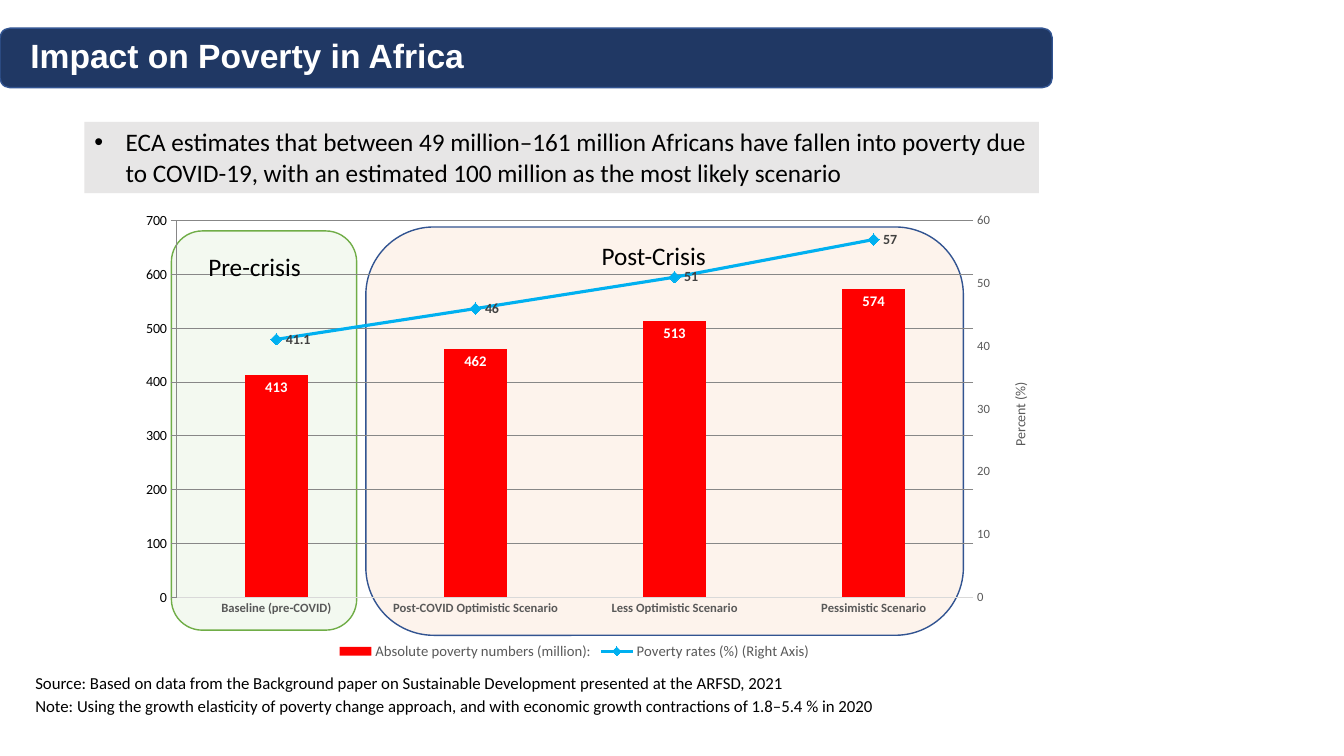
from pptx import Presentation, util as u
from pptx.chart.axis import ValueAxis
from pptx.chart.data import CategoryChartData
from pptx.dml.color import RGBColor
from pptx.enum import chart as ch, shapes, text
from pptx.oxml import parse_xml
from pptx.oxml.ns import nsdecls, qn
from lxml import etree

# Content
TITLE = "Impact on Poverty in Africa"
MESSAGE = ("ECA estimates that between 49 million–161 million Africans have fallen into poverty due "
           "to COVID-19, with an estimated 100 million as the most likely scenario")
NOTES = [
    "Source: Based on data from the Background paper on Sustainable Development presented at the ARFSD, 2021",
    "Note: Using the growth elasticity of poverty change approach, and with economic growth "
    "contractions of 1.8–5.4 % in 2020",
]
SCENARIOS = ["Baseline (pre-COVID)", "Post-COVID Optimistic Scenario",
             "Less Optimistic Scenario", "Pessimistic Scenario"]
SERIES = [("Absolute poverty numbers (million):", [413, 462, 513, 574]),
          ("Poverty rates (%) (Right Axis)", [41.1, 46, 51, 57])]
AXES = [("Millions of people", 700, 100), ("Percent (%)", 60, 10)]
PERIODS = [("Pre-crisis", (5, 6.22, 3.23, 1.02)), ("Post-Crisis", (14.91, 5.94, 3.23, 1.02))]
PLOT = dict(x=0.072, y=0.052, w=0.857, h=0.805)


class Theme:
    head_font, font = "Arial", "Calibri"
    navy, blue, green = "203864", "325491", "70AD47"
    peach, mint, grey = "FBE5D6", "E2F0D9", "E7E6E6"
    red, cyan, rule = "FF0000", "00B0F0", "D9D9D9"
    white, black, dark, mid = "FFFFFF", "000000", "404040", "595959"
    title, body, note, legend, small, tick = 24, 18, 12, 10.5, 10, 9


def rgb(c):
    return RGBColor.from_string(c)


def box(at):
    return [u.Cm(v) for v in at]


def style(font, size, color, bold=False, name=Theme.font):
    font.size, font.bold, font.name = u.Pt(size), bold, name
    font.color.rgb = rgb(color)


def write(tf, lines, size=Theme.body, color=Theme.black, bold=False, name=Theme.font,
          align=None, spacing=None, left=0, bullet=None, anchor=text.MSO_ANCHOR.TOP):
    tf.word_wrap, tf.vertical_anchor = True, anchor
    for i, line in enumerate(lines):
        p = tf.paragraphs[0] if i == 0 else tf.add_paragraph()
        pPr = p._p.get_or_add_pPr()
        pPr.set("marL", str(u.Cm(left)))
        pPr.set("indent", str(-u.Cm(left) if bullet else 0))
        if bullet:
            etree.SubElement(pPr, qn("a:buFont"), typeface="Arial")
            etree.SubElement(pPr, qn("a:buChar"), char=bullet)
        p.alignment, p.line_spacing = align, spacing
        r = p.add_run()
        r.text = line
        style(r.font, size, color, bold, name)


def panel(s, kind, at, fill, line=None, opacity=None):
    sp = s.shapes.add_shape(kind, *box(at))
    sp.shadow.inherit = False
    sp.fill.solid()
    sp.fill.fore_color.rgb = rgb(fill)
    if opacity:
        clr = sp._element.spPr.find(qn("a:solidFill"))[0]
        etree.SubElement(clr, qn("a:alpha"), val=str(opacity * 1000))
    if line:
        sp.line.color.rgb, sp.line.width = rgb(line), u.Pt(1)
    else:
        sp.line.fill.background()
    return sp


def add_right_axis(chart):
    """Move the second series to a line plot on its own axes."""
    area = chart._chartSpace.chart.plotArea
    bars = area.find(qn("c:barChart"))
    ser = bars.findall(qn("c:ser"))[1]
    line = parse_xml(f'<c:lineChart {nsdecls("c")}><c:grouping val="standard"/><c:varyColors val="0"/>'
                     '<c:marker val="1"/><c:axId val="501"/><c:axId val="502"/></c:lineChart>')
    invert = ser.find(qn("c:invertIfNegative"))
    if invert is not None:
        ser.remove(invert)
    line.insert(2, ser)
    bars.addnext(line)

    def axis(tag, own, other, hidden, pos, crosses):
        return parse_xml(
            f'<c:{tag} {nsdecls("c")}><c:axId val="{own}"/><c:scaling><c:orientation val="minMax"/></c:scaling>'
            f'<c:delete val="{hidden}"/><c:axPos val="{pos}"/><c:numFmt formatCode="General" sourceLinked="0"/>'
            '<c:majorTickMark val="out"/><c:minorTickMark val="none"/><c:tickLblPos val="nextTo"/>'
            f'<c:crossAx val="{other}"/><c:crosses val="{crosses}"/></c:{tag}>')

    cat, val = axis("catAx", 501, 502, 1, "b", "autoZero"), axis("valAx", 502, 501, 0, "r", "max")
    left = area.find(qn("c:valAx"))
    left.addnext(val)
    left.addnext(cat)
    return ValueAxis(val)


def set_plot_layout(chart):
    area = chart._chartSpace.chart.plotArea
    for old in area.findall(qn("c:layout")):
        area.remove(old)
    modes = '<c:layoutTarget val="inner"/><c:xMode val="edge"/><c:yMode val="edge"/>'
    sizes = "".join(f'<c:{k} val="{v}"/>' for k, v in PLOT.items())
    area.insert(0, parse_xml(f'<c:layout {nsdecls("c")}><c:manualLayout>{modes}{sizes}'
                             '</c:manualLayout></c:layout>'))


def format_value_axis(axis, title, top, step):
    axis.minimum_scale, axis.maximum_scale, axis.major_unit = 0, top, step
    axis.has_major_gridlines = False
    axis.format.line.fill.background()
    style(axis.tick_labels.font, Theme.tick, Theme.mid)
    tf = axis.axis_title.text_frame
    tf.text = title
    style(tf.paragraphs[0].runs[0].font, Theme.small, Theme.mid)
    body = tf._txBody.find(qn("a:bodyPr"))
    body.set("rot", "-5400000")
    body.set("vert", "horz")


def label(series, position, size, color):
    labels = series.data_labels
    labels.show_value, labels.position = True, position
    style(labels.font, size, color, True)


def add_poverty_chart(s, at):
    data = CategoryChartData()
    data.categories = SCENARIOS
    for name, values in SERIES:
        data.add_series(name, values)
    chart = s.shapes.add_chart(ch.XL_CHART_TYPE.COLUMN_CLUSTERED, *box(at), data).chart
    style(chart.font, Theme.small, Theme.black)
    chart.has_title = False
    chart.has_legend = True
    chart.legend.position = ch.XL_LEGEND_POSITION.BOTTOM
    chart.legend.include_in_layout = False
    style(chart.legend.font, Theme.legend, Theme.mid)

    # Axes
    right = add_right_axis(chart)
    set_plot_layout(chart)
    for axis, spec_row in zip((chart.value_axis, right), AXES):
        format_value_axis(axis, *spec_row)
    chart.value_axis.major_tick_mark = ch.XL_TICK_MARK.NONE
    cat = chart.category_axis
    cat.major_tick_mark = ch.XL_TICK_MARK.NONE
    cat.format.line.color.rgb, cat.format.line.width = rgb(Theme.rule), u.Pt(0.75)
    style(cat.tick_labels.font, Theme.tick, Theme.mid, True)

    # Columns and line
    columns, line = chart.plots
    columns.gap_width, columns.overlap, columns.vary_by_categories = 219, -27, False
    people, rate = columns.series[0], line.series[0]
    people.format.fill.solid()
    people.format.fill.fore_color.rgb = rgb(Theme.red)
    label(people, ch.XL_LABEL_POSITION.INSIDE_END, Theme.legend, Theme.white)
    rate.smooth = False
    rate.format.line.color.rgb, rate.format.line.width = rgb(Theme.cyan), u.Pt(2.25)
    rate.marker.style, rate.marker.size = ch.XL_MARKER_STYLE.DIAMOND, 8
    rate.marker.format.fill.solid()
    rate.marker.format.fill.fore_color.rgb = rgb(Theme.cyan)
    rate.marker.format.line.color.rgb = rgb(Theme.cyan)
    label(rate, ch.XL_LABEL_POSITION.RIGHT, Theme.small, Theme.dark)


def main():
    prs = Presentation()
    prs.slide_width, prs.slide_height = u.Cm(33.87), u.Cm(19.05)
    s = prs.slides.add_slide(prs.slide_layouts[5])
    rounded, rect = shapes.MSO_SHAPE.ROUNDED_RECTANGLE, shapes.MSO_SHAPE.RECTANGLE

    # Header bar with the title on top
    panel(s, rounded, (0, 0.71, 26.52, 1.5), Theme.navy, Theme.blue)
    title = s.shapes.title
    s.shapes._spTree.append(title._element)
    title.left, title.top, title.width, title.height = box((0.51, 0.74, 14.58, 1.27))
    write(title.text_frame, [TITLE], size=Theme.title, color=Theme.white, bold=True,
          name=Theme.head_font, align=text.PP_ALIGN.LEFT, anchor=text.MSO_ANCHOR.MIDDLE)

    # Key message and notes
    sp = panel(s, rect, (2.13, 3.07, 24.05, 1.8), Theme.grey)
    write(sp.text_frame, [MESSAGE], align=text.PP_ALIGN.LEFT, left=0.79, bullet="•")
    sp = s.shapes.add_textbox(*box((0, 16.74, 31.72, 1.4)))
    write(sp.text_frame, NOTES, size=Theme.note, align=text.PP_ALIGN.JUSTIFY, spacing=1.15, left=0.64)

    # Period panels, chart and period names
    panel(s, rounded, (9.22, 5.72, 15.06, 10.29), Theme.peach, Theme.blue, opacity=44)
    panel(s, rounded, (4.32, 5.82, 4.67, 10.06), Theme.mint, Theme.green, opacity=39)
    add_poverty_chart(s, (2.77, 4.95, 23.42, 11.79))
    for name, at in PERIODS:
        write(s.shapes.add_textbox(*box(at)).text_frame, [name])
    prs.save("out.pptx")


if __name__ == "__main__":
    main()
